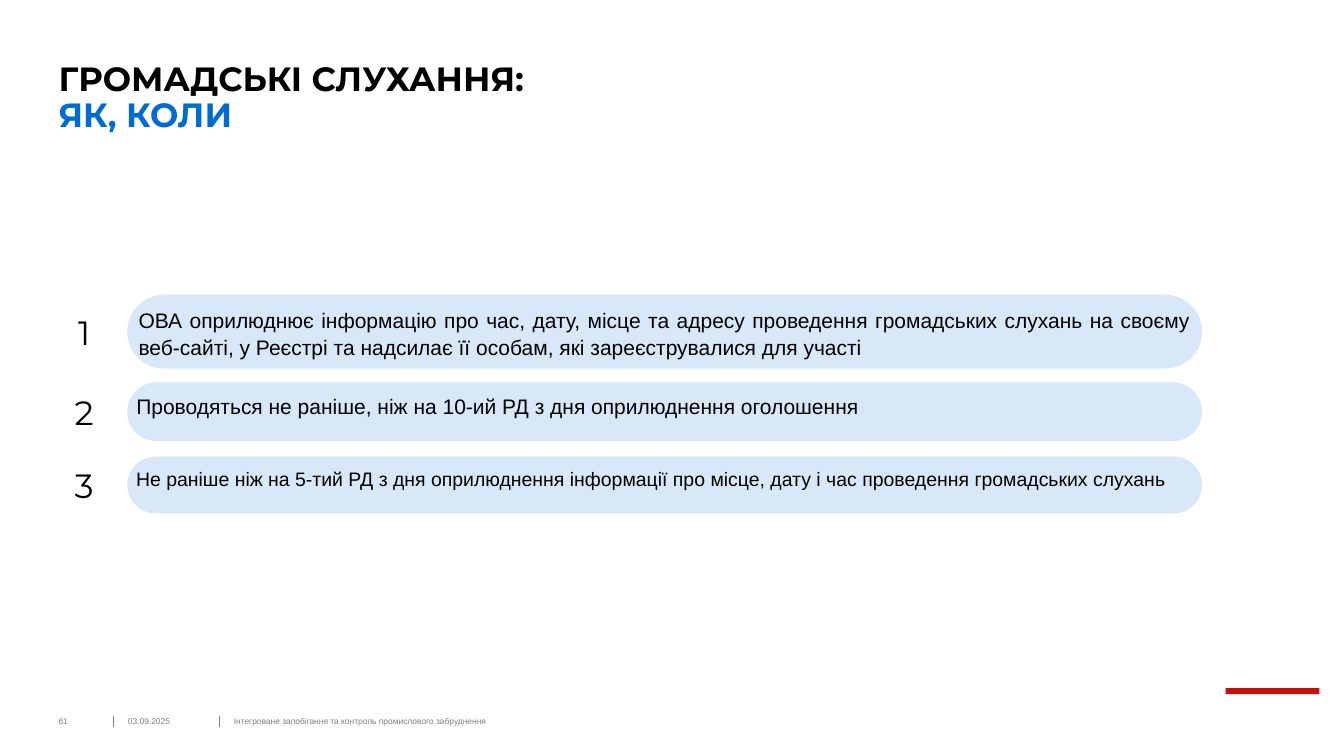
from lxml import etree
from pptx import Presentation
from pptx import util as u
from pptx.dml.color import RGBColor
from pptx.enum import shapes, text

Pt = u.Pt
HUES = {"black": "000000", "blue": "006CD2", "pale": "D8E8F8",
        "grey": "7F7F7F", "red": "C80F0F"}
hue = {name: RGBColor.from_string(code) for name, code in HUES.items()}
form = shapes.MSO_SHAPE
align = text.PP_ALIGN
anchor = text.MSO_ANCHOR

deck = Presentation()
deck.slide_width, deck.slide_height = Pt(960), Pt(540)
slide = deck.slides.add_slide(deck.slide_layouts[6])


def frame(shape, place):
    box = shape.text_frame
    box.word_wrap = True
    box.vertical_anchor = place
    box.margin_left = box.margin_right = box.margin_top = box.margin_bottom = 0
    return box.paragraphs[0]


def write(para, words, size, color, font="Arial", bold=False):
    run = para.add_run()
    run.text = words
    run.font.size = Pt(size)
    run.font.name = font
    run.font.bold = bold
    run.font.color.rgb = hue[color]


for x in (81.4, 157):
    rule = slide.shapes.add_connector(
        shapes.MSO_CONNECTOR.STRAIGHT, Pt(x), Pt(511.2), Pt(x), Pt(519.1))
    rule.line.color.rgb = hue["grey"]
    rule.line.width = Pt(0.75)
    etree.SubElement(
        rule._element.spPr,
        "{http://schemas.openxmlformats.org/drawingml/2006/main}effectLst")

bar = slide.shapes.add_shape(form.RECTANGLE, Pt(875.5), Pt(491.6), Pt(67), Pt(4.3))
bar.shadow.inherit = False
bar.fill.solid()
bar.fill.fore_color.rgb = hue["red"]
bar.line.fill.background()

title = slide.shapes.add_textbox(Pt(41.8), Pt(28.8), Pt(578), Pt(67.7))
para = frame(title, anchor.BOTTOM)
para.line_spacing = 0.9
write(para, "ГРОМАДСЬКІ СЛУХАННЯ:", 24, "black", "Montserrat", True)
para.add_line_break()
write(para, "ЯК, КОЛИ", 24, "blue", "Montserrat", True)

steps = [
    (211, 51.8, 15, "ОВА оприлюднює інформацію про час, дату, місце та адресу "
     "проведення громадських слухань на своєму веб-сайті, у Реєстрі та "
     "надсилає її особам, які зареєструвалися для участі"),
    (273.6, 41, 15, "Проводяться не раніше, ніж на 10-ий РД з дня "
     "оприлюднення оголошення"),
    (326.6, 39.6, 13.9, "Не раніше ніж на 5-тий РД з дня оприлюднення "
     "інформації про місце, дату і час проведення громадських слухань"),
]
disc = 41
for num, (top, tall, size, words) in enumerate(steps, 1):
    pill = slide.shapes.add_shape(
        form.ROUNDED_RECTANGLE, Pt(91.4), Pt(top), Pt(766.8), Pt(tall))
    pill.adjustments[0] = 0.5
    pill.shadow.inherit = False
    pill.fill.solid()
    pill.fill.fore_color.rgb = hue["pale"]
    pill.line.color.rgb = hue["pale"]
    pill.line.width = Pt(1)
    para = frame(pill, anchor.TOP)
    para.alignment = align.JUSTIFY
    para.line_spacing = 1.07
    write(para, words, size, "black")

    mark = slide.shapes.add_shape(
        form.OVAL, Pt(39.6), Pt(top + (tall - disc) / 2), Pt(disc), Pt(disc))
    mark.shadow.inherit = False
    mark.fill.background()
    mark.line.fill.background()
    para = frame(mark, anchor.MIDDLE)
    para.alignment = align.CENTER
    write(para, str(num), 24, "black", "Montserrat")

foot = [
    (41.8, 36.7, "61"),
    (91.4, 56.9, "03.09.2025"),
    (167, 538.6, "Інтегроване запобігання та контроль промислового забруднення"),
]
for left, wide, words in foot:
    note = slide.shapes.add_textbox(Pt(left), Pt(511.2), Pt(wide), Pt(7.2))
    write(frame(note, anchor.MIDDLE), words, 6, "grey")

deck.save("out.pptx")
